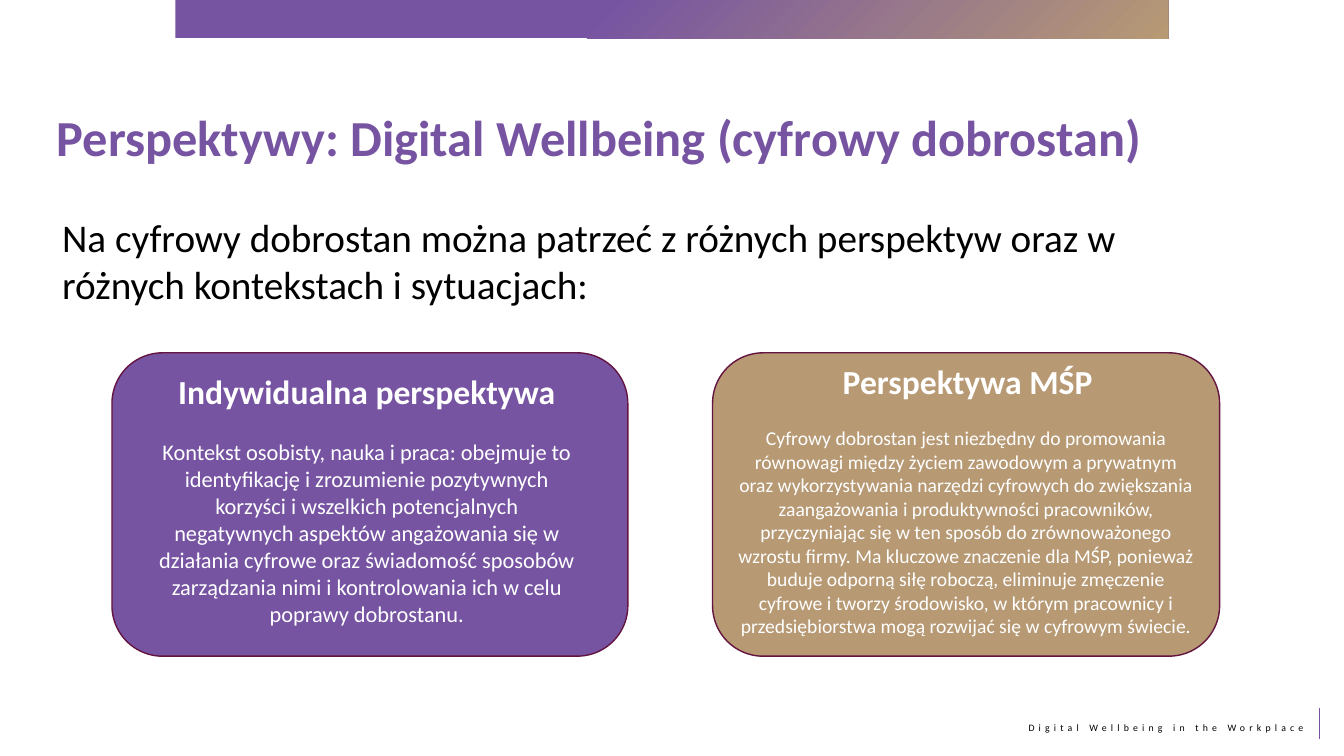
from dataclasses import dataclass

from lxml.etree import SubElement
from pptx import Presentation
from pptx.dml.color import RGBColor
from pptx.enum.shapes import MSO_CONNECTOR, MSO_SHAPE
from pptx.enum.text import MSO_ANCHOR, MSO_AUTO_SIZE, PP_ALIGN
from pptx.oxml.ns import qn
from pptx.shapes.autoshape import Shape
from pptx.slide import Slide
from pptx.text.text import TextFrame
from pptx.util import Pt


@dataclass(frozen=True)
class Theme:
    font: str = "Calibri"
    purple: RGBColor = RGBColor(0x76, 0x54, 0xA2)
    gold: RGBColor = RGBColor(0xB7, 0x99, 0x74)
    outline: RGBColor = RGBColor(0x63, 0x14, 0x40)
    black: RGBColor = RGBColor(0, 0, 0)
    white: RGBColor = RGBColor(0xFF, 0xFF, 0xFF)
    title_size: float = 36
    intro_size: float = 28
    heading_size: float = 24
    individual_size: float = 16
    business_size: float = 14
    footer_size: float = 7


@dataclass(frozen=True)
class Box:
    left: float
    top: float
    width: float
    height: float

    def lengths(self) -> tuple[Pt, Pt, Pt, Pt]:
        return Pt(self.left), Pt(self.top), Pt(self.width), Pt(self.height)


@dataclass(frozen=True)
class Card:
    box: Box
    fill: RGBColor
    heading: str
    heading_box: Box


THEME = Theme()
INDIVIDUAL = Card(Box(80, 252, 368.5, 216.7), THEME.purple,
                  "Indywidualna perspektywa", Box(105.8, 261.4, 312.5, 191.5))
BUSINESS = Card(Box(509, 252, 362.2, 216.7), THEME.gold,
                "Perspektywa MŚP", Box(528.5, 254.2, 325.4, 51.8))
INDIVIDUAL_TEXT = (
    "Kontekst osobisty, nauka i praca: obejmuje to identyfikację i zrozumienie "
    "pozytywnych korzyści i wszelkich potencjalnych negatywnych aspektów "
    "angażowania się w działania cyfrowe oraz świadomość sposobów zarządzania "
    "nimi i kontrolowania ich w celu poprawy dobrostanu."
)
BUSINESS_TEXT = (
    "Cyfrowy dobrostan jest niezbędny do promowania równowagi między życiem "
    "zawodowym a prywatnym oraz wykorzystywania narzędzi cyfrowych do zwiększania "
    "zaangażowania i produktywności pracowników, przyczyniając się w ten sposób do "
    "zrównoważonego wzrostu firmy. Ma kluczowe znaczenie dla MŚP, ponieważ buduje "
    "odporną siłę roboczą, eliminuje zmęczenie cyfrowe i tworzy środowisko, w którym "
    "pracownicy i przedsiębiorstwa mogą rozwijać się w cyfrowym świecie."
)


def write_text(frame: TextFrame, text: str, *, size: float, color: RGBColor,
               bold: bool = False, align: PP_ALIGN = PP_ALIGN.LEFT,
               space_before: float = 0, tracking: float = 0) -> None:
    """Fill the empty first paragraph, or add one after the existing text."""
    paragraph = frame.add_paragraph() if frame.text else frame.paragraphs[0]
    paragraph.alignment = align
    paragraph.space_before = Pt(space_before)
    run = paragraph.add_run()
    run.text = text
    font = run.font
    font.name, font.size, font.bold = THEME.font, Pt(size), bold
    font.color.rgb = color
    if tracking:
        run._r.get_or_add_rPr().set("spc", str(round(tracking * 100)))


def add_text_box(slide: Slide, box: Box) -> TextFrame:
    frame = slide.shapes.add_textbox(*box.lengths()).text_frame
    frame.word_wrap = True
    return frame


def add_band(slide: Slide, box: Box) -> None:
    band = slide.shapes.add_shape(MSO_SHAPE.RECTANGLE, *box.lengths())
    band.shadow.inherit = False
    band.line.fill.background()
    band.fill.gradient()
    stops = ((0, THEME.gold), (0.58, THEME.purple))
    for stop, (position, color) in zip(band.fill.gradient_stops, stops):
        stop.position = position
        stop.color.rgb = color
    # Radial gradient centred on the lower right corner
    gradient = band._element.spPr.find(qn("a:gradFill"))
    gradient.remove(gradient.find(qn("a:lin")))
    radial = SubElement(gradient, qn("a:path"), {"path": "circle"})
    SubElement(radial, qn("a:fillToRect"), {"l": "100000", "t": "100000"})


def add_footer_line(slide: Slide, x: float, top: float, bottom: float) -> None:
    line = slide.shapes.add_connector(
        MSO_CONNECTOR.STRAIGHT, Pt(x), Pt(bottom), Pt(x), Pt(top))
    line.line.color.rgb = THEME.purple
    line.line.width = Pt(0.75)
    SubElement(line._element.spPr, qn("a:effectLst"))


def add_card(slide: Slide, card: Card) -> tuple[Shape, TextFrame]:
    shape = slide.shapes.add_shape(MSO_SHAPE.ROUNDED_RECTANGLE, *card.box.lengths())
    shape.shadow.inherit = False
    shape.fill.solid()
    shape.fill.fore_color.rgb = card.fill
    shape.line.color.rgb = THEME.outline
    shape.line.width = Pt(1)
    heading = add_text_box(slide, card.heading_box)
    write_text(heading, card.heading, size=THEME.heading_size, color=THEME.white,
               bold=True, align=PP_ALIGN.CENTER)
    return shape, heading


def main() -> None:
    presentation = Presentation()
    presentation.slide_width, presentation.slide_height = Pt(960), Pt(540)
    slide = presentation.slides.add_slide(presentation.slide_layouts[5])

    # Top band and footer
    add_band(slide, Box(125.3, 0, 709.2, 27.4))
    footer = add_text_box(slide, Box(697, 512, 241.2, 15.8))
    write_text(footer, "Digital Wellbeing in the Workplace", size=THEME.footer_size,
               color=THEME.black, align=PP_ALIGN.RIGHT, tracking=3)
    add_footer_line(slide, 942.5, 505.4, 527.8)

    # Title
    title = slide.shapes.title
    title.left, title.top, title.width, title.height = Box(36, 70.6, 825, 63.4).lengths()
    title_frame = title.text_frame
    title_frame.auto_size = MSO_AUTO_SIZE.NONE
    title_frame.vertical_anchor = MSO_ANCHOR.TOP
    title_frame.margin_left, title_frame.margin_top = Pt(4.5), Pt(5)
    write_text(title_frame, "Perspektywy: Digital Wellbeing (cyfrowy dobrostan)",
               size=THEME.title_size, color=THEME.purple, bold=True)

    # Introduction
    intro = add_text_box(slide, Box(37.4, 149, 849.6, 74.9))
    write_text(intro, "Na cyfrowy dobrostan można patrzeć z różnych perspektyw oraz "
               "w różnych kontekstach i sytuacjach:",
               size=THEME.intro_size, color=THEME.black)

    # Individual perspective: text follows its heading
    _, individual_frame = add_card(slide, INDIVIDUAL)
    write_text(individual_frame, INDIVIDUAL_TEXT, size=THEME.individual_size,
               color=THEME.white, align=PP_ALIGN.CENTER, space_before=19.5)

    # Business perspective: text fills the card below its heading
    business_shape, _ = add_card(slide, BUSINESS)
    business_frame = business_shape.text_frame
    business_frame.word_wrap = True
    business_frame.vertical_anchor = MSO_ANCHOR.MIDDLE
    business_frame.margin_top = Pt(42.6)
    write_text(business_frame, BUSINESS_TEXT, size=THEME.business_size,
               color=THEME.white, align=PP_ALIGN.CENTER)

    presentation.save("out.pptx")


if __name__ == "__main__":
    main()
